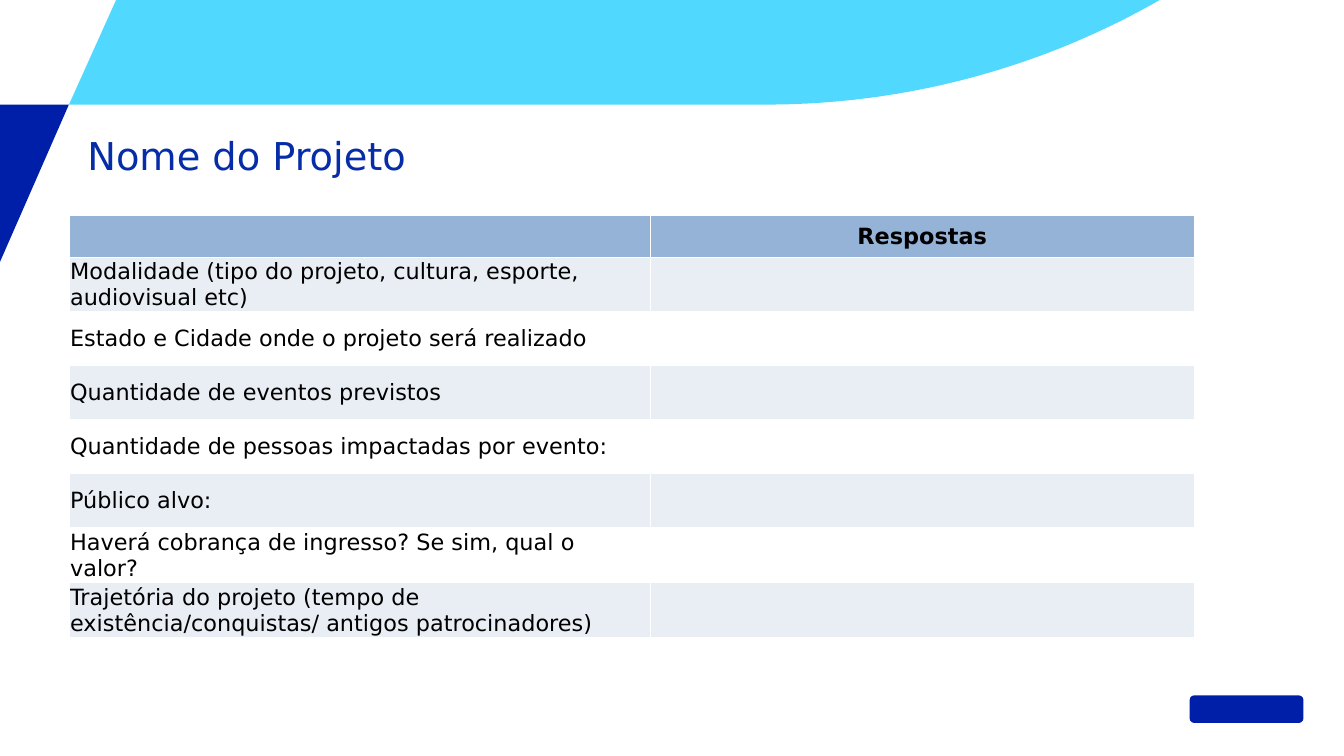
import math

import lxml.etree
import pptx
import pptx.dml.color
import pptx.enum.shapes
import pptx.enum.text
import pptx.oxml.ns
import pptx.util

Inches = pptx.util.Inches
RGBColor = pptx.dml.color.RGBColor
Align = pptx.enum.text.PP_ALIGN
Anchor = pptx.enum.text.MSO_ANCHOR

COLORS = {
    "sky": "51D8FF", "navy": "001FA8", "title": "062CA8", "text": "000000",
    "header": "95B3D7", "band": "E9EDF4", "white": "FFFFFF",
}
MARGIN = 0.6          # left edge of the table and of the band's lower corner
BAND_BOTTOM = 0.91

QUESTIONS = [
    "Modalidade (tipo do projeto, cultura, esporte, audiovisual etc)",
    "Estado e Cidade onde o projeto será realizado",
    "Quantidade de eventos previstos",
    "Quantidade de pessoas impactadas por evento:",
    "Público alvo:",
    "Haverá cobrança de ingresso? Se sim, qual o valor?",
    "Trajetória do projeto (tempo de existência/conquistas/ antigos patrocinadores)",
]


def write(frame, text, size=14, color="text", bold=False, align=Align.LEFT):
    para = frame.paragraphs[0]
    para.alignment = align
    span = para.add_run()
    span.text = text
    span.font.name = "DejaVu Sans"
    span.font.size = pptx.util.Pt(size)
    span.font.bold = bold
    span.font.color.rgb = RGBColor.from_string(COLORS[color])


def paint(shape, color):
    """Give a shape a plain fill with no outline or shadow."""
    shape.shadow.inherit = False
    shape.fill.solid()
    shape.fill.fore_color.rgb = RGBColor.from_string(COLORS[color])
    shape.line.fill.background()


# A page as wide as A4 is long, 16:9; the template's 4:3 label is dropped
deck = pptx.Presentation()
deck.slide_width = pptx.util.Mm(297)
deck.slide_height = deck.slide_width * 9 // 16
slide_size = deck.element.find(pptx.oxml.ns.qn("p:sldSz"))
slide_size.attrib.pop("type", None)
page = deck.slides.add_slide(deck.slide_layouts[5])

# Top band: its right end is an arc that leaves the lower edge smoothly
arc_start, arc_end = 6.67, 10.09
radius = ((arc_end - arc_start) ** 2 + BAND_BOTTOM ** 2) / (2 * BAND_BOTTOM)
sweep = math.asin((arc_end - arc_start) / radius)
steps = 40
arc = []
for step in range(steps + 1):
    angle = sweep * step / steps
    arc.append((arc_start + radius * math.sin(angle),
                BAND_BOTTOM - radius * (1 - math.cos(angle))))

outlines = [
    ("sky", [(1.01, 0), (MARGIN, BAND_BOTTOM)] + arc),
    ("navy", [(0, BAND_BOTTOM), (MARGIN, BAND_BOTTOM), (0, 2.28)]),
]
for color, points in outlines:
    corners = [(Inches(x), Inches(y)) for x, y in points]
    builder = page.shapes.build_freeform(*corners[0])
    builder.add_line_segments(corners[1:], close=True)
    paint(builder.convert_to_shape(), color)

# Plain badge in the lower right corner
badge = page.shapes.add_shape(
    pptx.enum.shapes.MSO_SHAPE.ROUNDED_RECTANGLE,
    Inches(10.35), Inches(6.05), Inches(0.99), Inches(0.24))
paint(badge, "navy")

# Title
title = page.shapes.title
title.left, title.top = Inches(0.76), Inches(1.15)
title.width, title.height = Inches(8.3), Inches(0.4)
frame = title.text_frame
frame.margin_left = frame.margin_right = frame.margin_top = frame.margin_bottom = 0
frame.vertical_anchor = Anchor.TOP
frame.word_wrap = True
frame.auto_size = pptx.enum.text.MSO_AUTO_SIZE.NONE
write(frame, "Nome do Projeto", size=24, color="title")

# Table of questions and answers
columns = [5.06, 4.73]
heights = [0.37] + [0.47] * 5 + [0.48] * 2
table = page.shapes.add_table(
    len(heights), len(columns), Inches(MARGIN), Inches(1.87),
    Inches(sum(columns)), Inches(sum(heights))).table
table.horz_banding = False
for column, width in zip(table.columns, columns):
    column.width = Inches(width)

for index, (row, height) in enumerate(zip(table.rows, heights)):
    row.height = Inches(height)
    fill = "header" if index == 0 else "band" if index % 2 else "white"
    for cell in row.cells:
        cell.margin_left = cell.margin_right = cell.margin_top = Inches(0.01)
        cell.margin_bottom = 0
        cell.vertical_anchor = Anchor.MIDDLE
        properties = cell._tc.get_or_add_tcPr()
        for side in ("lnL", "lnR", "lnT", "lnB"):
            border = lxml.etree.SubElement(
                properties, pptx.oxml.ns.qn("a:" + side), w=str(pptx.util.Pt(1)))
            solid = lxml.etree.SubElement(border, pptx.oxml.ns.qn("a:solidFill"))
            lxml.etree.SubElement(
                solid, pptx.oxml.ns.qn("a:srgbClr"), val=COLORS["white"])
        cell.fill.solid()
        cell.fill.fore_color.rgb = RGBColor.from_string(COLORS[fill])

write(table.cell(0, 1).text_frame, "Respostas", bold=True, align=Align.CENTER)
for index, question in enumerate(QUESTIONS, start=1):
    write(table.cell(index, 0).text_frame, question)

deck.save("out.pptx")
